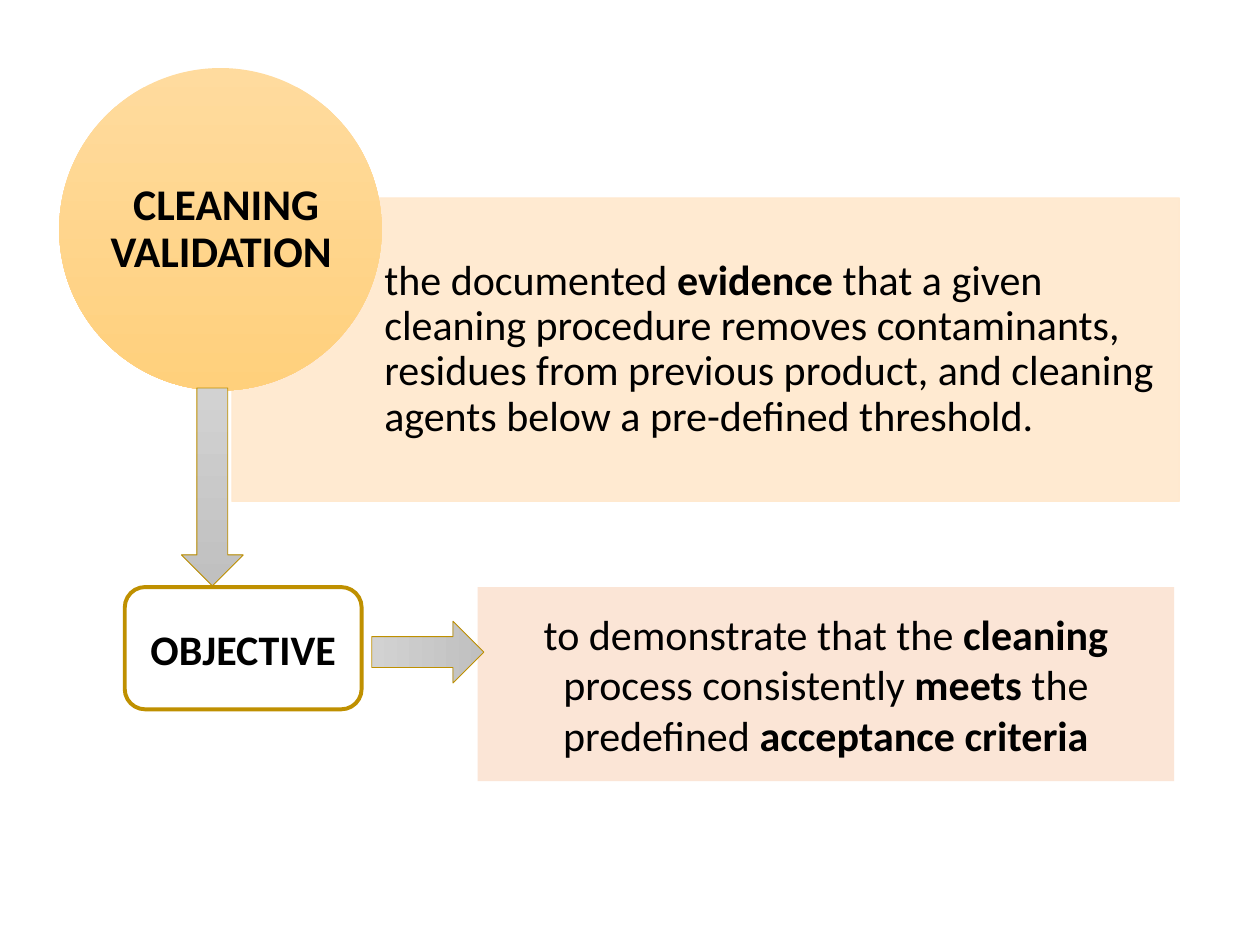
"""Build the cleaning validation slide with its definition and objective."""
from dataclasses import dataclass
from typing import Optional

import lxml.etree
import pptx
import pptx.dml.color
import pptx.enum.shapes
import pptx.enum.text
import pptx.oxml.ns
import pptx.util

Inches = pptx.util.Inches
Kind = pptx.enum.shapes.MSO_SHAPE
Align = pptx.enum.text.PP_ALIGN


@dataclass(frozen=True)
class Theme:
    font: str = "Calibri"
    body_size: float = 24
    title_size: float = 25
    text: str = "000000"
    white: str = "FFFFFF"
    gold: str = "BF9000"
    definition: str = "FFE8CC"
    objective: str = "FBE5D6"
    circle: tuple[str, ...] = ("FFDB9E", "FFD07C")
    arrow: tuple[str, ...] = ("D2D2D2", "C0C0C0")
    thin: float = 0.5
    thick: float = 2.25


THEME = Theme()


@dataclass(frozen=True)
class Figure:
    kind: Kind
    at: tuple[float, ...]
    colors: tuple[str, ...]
    line: Optional[str] = None
    width: float = THEME.thin
    rotation: float = 0
    opacity: int = 100


@dataclass(frozen=True)
class Label:
    at: tuple[float, ...]
    spans: tuple[tuple[str, bool], ...]
    size: float = THEME.body_size
    align: Align = Align.CENTER
    spacing: float = 1.0
    margins: tuple[float, ...] = (0.1, 0.05, 0.1, 0.05)


def rgb(value: str) -> pptx.dml.color.RGBColor:
    """Turn a hex value into a colour."""
    return pptx.dml.color.RGBColor.from_string(value)


def draw_figure(page, figure: Figure) -> None:
    """Draw one filled shape."""
    shape = page.shapes.add_shape(figure.kind, *map(Inches, figure.at))
    shape.shadow.inherit = False
    shape.rotation = figure.rotation
    if len(figure.colors) > 1:
        shape.fill.gradient()
        shape.fill.gradient_angle = 270
        for stop, color in zip(shape.fill.gradient_stops, figure.colors):
            stop.color.rgb = rgb(color)
    else:
        shape.fill.solid()
        shape.fill.fore_color.rgb = rgb(figure.colors[0])
    if figure.line:
        shape.line.color.rgb = rgb(figure.line)
        shape.line.width = pptx.util.Pt(figure.width)
    else:
        shape.line.fill.background()
    if figure.opacity < 100:
        for color in shape.element.spPr.iter(pptx.oxml.ns.qn("a:srgbClr")):
            alpha = lxml.etree.SubElement(color, pptx.oxml.ns.qn("a:alpha"))
            alpha.set("val", str(figure.opacity * 1000))


def draw_label(page, label: Label) -> None:
    """Write one vertically centred paragraph of plain and bold spans."""
    frame = page.shapes.add_textbox(*map(Inches, label.at)).text_frame
    sides = ("left", "top", "right", "bottom")
    settings = {"word_wrap": True, "vertical_anchor": pptx.enum.text.MSO_ANCHOR.MIDDLE}
    settings |= {f"margin_{side}": Inches(gap) for side, gap in zip(sides, label.margins)}
    for name, value in settings.items():
        setattr(frame, name, value)
    para = frame.paragraphs[0]
    para.alignment = label.align
    para.line_spacing = label.spacing
    for text, bold in label.spans:
        span = para.add_run()
        span.text = text
        formats = {"name": THEME.font, "size": pptx.util.Pt(label.size), "bold": bold}
        for name, value in formats.items():
            setattr(span.font, name, value)
        span.font.color.rgb = rgb(THEME.text)


OBJECTIVE_TITLE = (0.99, 4.66, 1.88, 0.97)
OBJECTIVE_PANEL = (3.79, 4.66, 5.53, 1.54)

ITEMS = (
    Figure(Kind.RECTANGLE, (1.84, 1.57, 7.52, 2.41), (THEME.definition,),
           THEME.definition, opacity=90),
    Label((3.05, 1.57, 6.32, 2.41), (
        ("the documented ", False), ("evidence", True),
        (" that a given cleaning procedure removes contaminants, residues from "
         "previous product, and cleaning agents below a pre-defined threshold.", False),
    ), align=Align.LEFT, spacing=0.9, margins=(0, 0.19, 0.19, 0.19)),
    Figure(Kind.OVAL, (0.47, 0.54, 2.56, 2.56), THEME.circle),
    Label((0.85, 0.92, 1.81, 1.81), ((" CLEANING VALIDATION", True),),
          size=THEME.title_size, spacing=0.9, margins=(0, 0, 0, 0)),
    Figure(Kind.DOWN_ARROW, (1.44, 3.08, 0.49, 1.57), THEME.arrow, THEME.gold),
    Figure(Kind.ROUNDED_RECTANGLE, OBJECTIVE_TITLE, (THEME.white,), THEME.gold, THEME.thick),
    Label(OBJECTIVE_TITLE, (("OBJECTIVE", True),)),
    Figure(Kind.RECTANGLE, OBJECTIVE_PANEL, (THEME.objective,)),
    Label(OBJECTIVE_PANEL, (
        ("to demonstrate that the ", False), ("cleaning", True),
        (" process consistently ", False), ("meets", True),
        (" the predefined ", False), ("acceptance criteria", True),
    )),
    Figure(Kind.DOWN_ARROW, (3.15, 4.73, 0.49, 0.89), THEME.arrow, THEME.gold, rotation=270),
)


def main() -> None:
    """Create the deck and save it."""
    deck = pptx.Presentation()
    deck.slide_width, deck.slide_height = Inches(10), Inches(7.5)
    page = deck.slides.add_slide(deck.slide_layouts[6])
    for item in ITEMS:
        if isinstance(item, Figure):
            draw_figure(page, item)
        else:
            draw_label(page, item)
    deck.save("out.pptx")


if __name__ == "__main__":
    main()
